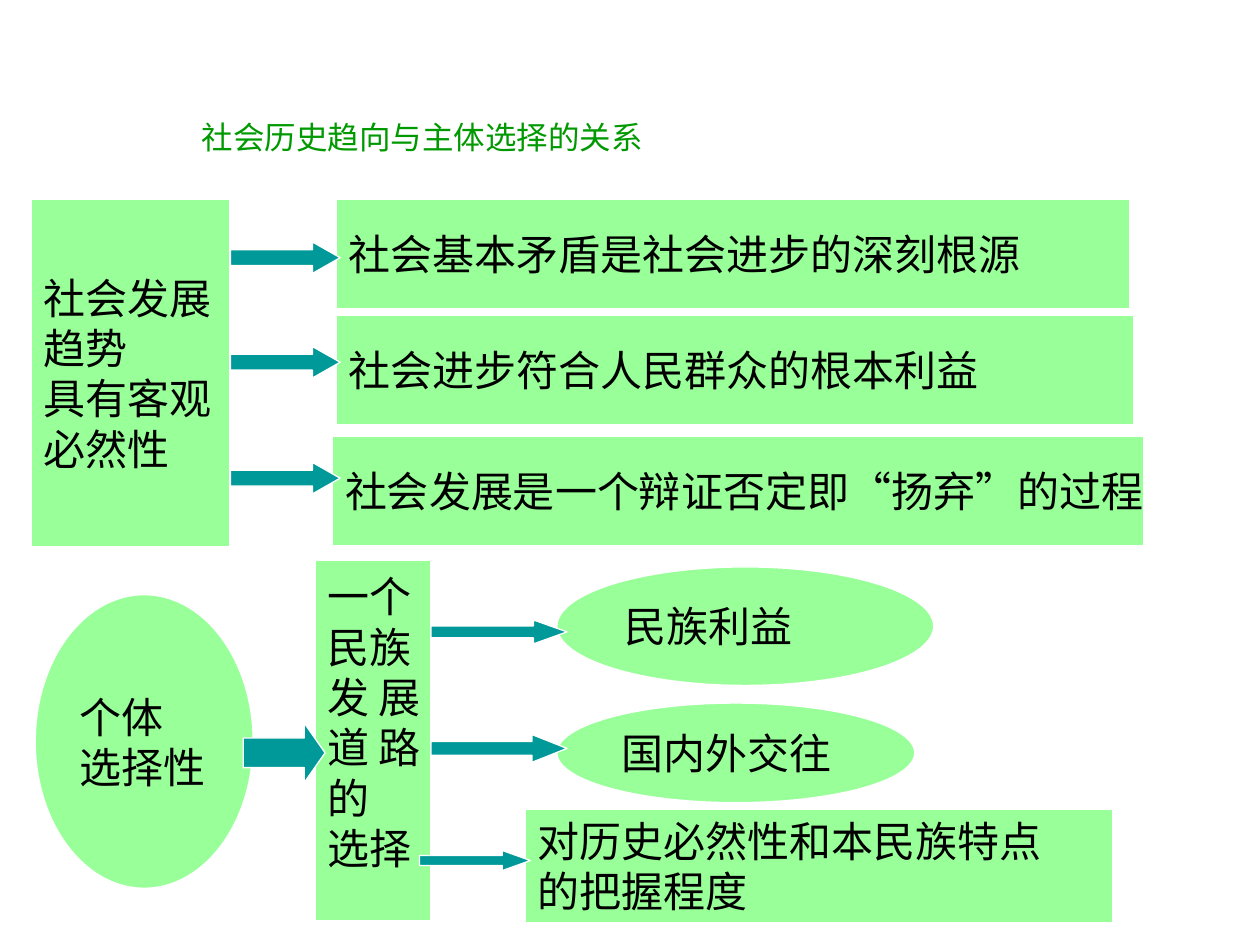
import pptx
import pptx.util
import pptx.dml.color
import pptx.enum.shapes
import pptx.enum.text

Inches = pptx.util.Inches
Pt = pptx.util.Pt
MSO = pptx.enum.shapes.MSO_SHAPE
LEFT = pptx.enum.text.PP_ALIGN.LEFT
MIDDLE = pptx.enum.text.MSO_ANCHOR.MIDDLE


def paint(color_format, value):
    color_format.rgb = pptx.dml.color.RGBColor.from_string(value)


def add_block(kind, box, fill):
    sp = s.shapes.add_shape(kind, *[Inches(v) for v in box])
    sp.shadow.inherit = False
    sp.fill.solid()
    paint(sp.fill.fore_color, fill)
    paint(sp.line.color, "FFFFFF")
    sp.line.width = Pt(0.75)
    return sp


prs = pptx.Presentation()
prs.slide_width = Inches(10)
prs.slide_height = Inches(7.5)
s = prs.slides.add_slide(prs.slide_layouts[5])

title = s.shapes.title
title.left, title.top = Inches(1.5), Inches(0.42)
title.width, title.height = Inches(7.42), Inches(1.33)
title.text_frame.text = "社会历史趋向与主体选择的关系"
title.text_frame.vertical_anchor = MIDDLE
p = title.text_frame.paragraphs[0]
p.alignment = LEFT
p.font.size = Pt(18)
p.font.name = "Calibri"
paint(p.font.color, "009900")

blocks = [
    (MSO.RECTANGLE, (0.25, 1.58, 1.57, 2.76), "社会发展\n趋势\n具有客观\n必然性"),
    (MSO.RECTANGLE, (2.67, 1.58, 6.3, 0.87), "社会基本矛盾是社会进步的深刻根源"),
    (MSO.RECTANGLE, (2.67, 2.5, 6.33, 0.87), "社会进步符合人民群众的根本利益"),
    (MSO.RECTANGLE, (2.64, 3.46, 6.44, 0.87), "社会发展是一个辩证否定即“扬弃”的过程"),
    (MSO.OVAL, (0.28, 4.72, 1.73, 2.33), "个体\n选择性"),
    (MSO.OVAL, (4.42, 4.5, 2.99, 0.94), "民族利益"),
    (MSO.OVAL, (4.42, 5.58, 2.84, 0.79), "国内外交往"),
    (MSO.RECTANGLE, (4.17, 6.42, 4.66, 0.9), "对历史必然性和本民族特点\n的把握程度"),
    (MSO.RECTANGLE, (2.5, 4.45, 0.92, 2.86), "一个\n民族\n发 展\n道 路\n的\n选择"),
]
for kind, box, text in blocks:
    sp = add_block(kind, box, "99FF99")
    tf = sp.text_frame
    tf.text = text
    tf.word_wrap = False
    tf.vertical_anchor = MIDDLE
    for p in tf.paragraphs:
        p.alignment = LEFT
        p.font.size = Pt(24)
        p.font.name = "Calibri"
        paint(p.font.color, "000000")
tf.margin_bottom = Inches(0.35)

arrows = [
    ((1.93, 5.74, 0.65, 0.47), 0.35),
    *[((1.83, top, 0.87, 0.25), 0.88) for top in (1.92, 2.75, 3.67)],
    ((3.42, 4.92, 1.08, 0.19), 1.4),
    ((3.42, 5.83, 1.08, 0.22), 1.26),
    ((3.33, 6.75, 0.88, 0.16), 1.4),
]
for box, head in arrows:
    sp = add_block(MSO.RIGHT_ARROW, box, "009999")
    sp.adjustments[1] = head

prs.save("out.pptx")
